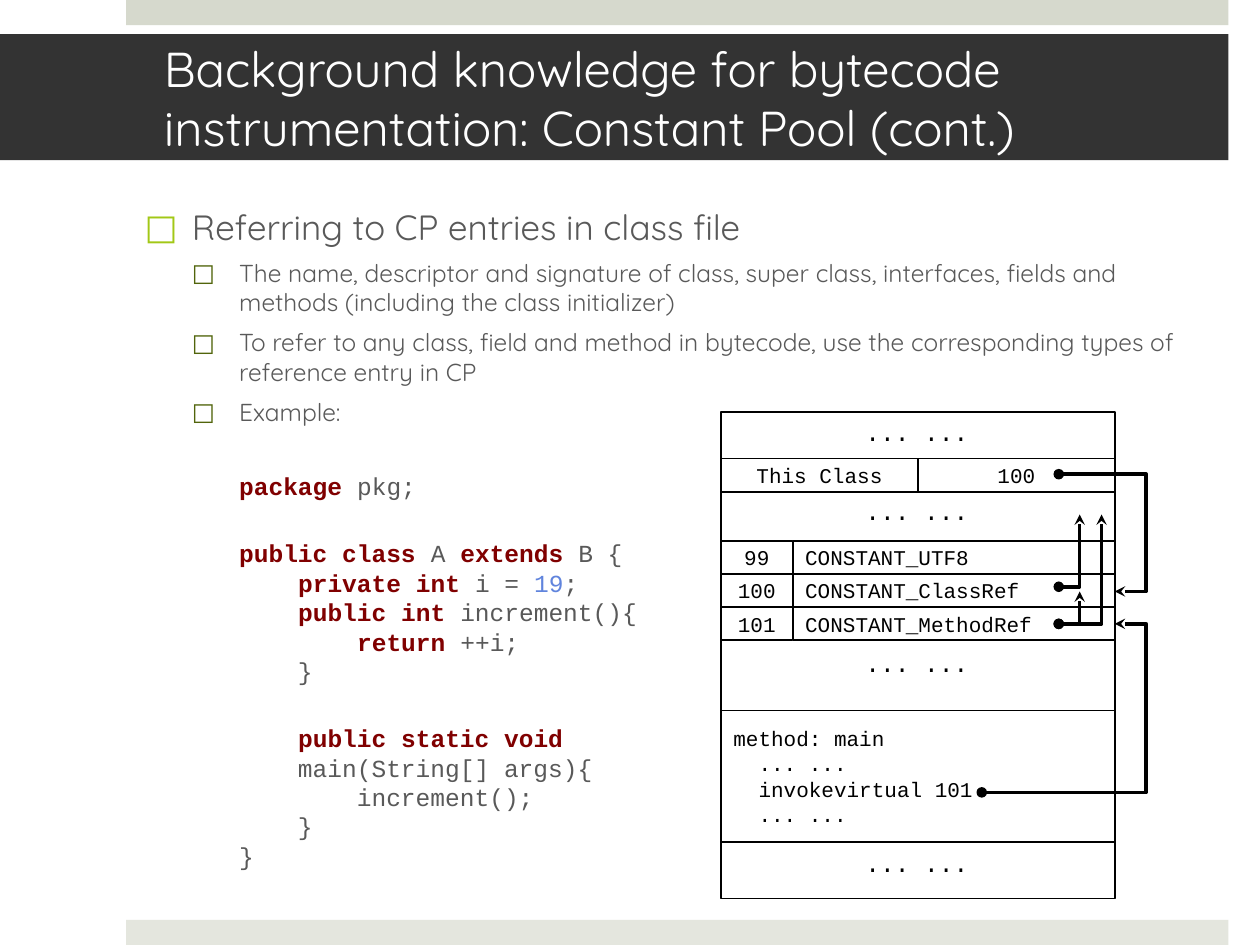
from pptx import Presentation
from pptx.dml.color import RGBColor
from pptx.enum import shapes, text
from pptx.oxml.ns import qn
from pptx.util import Pt
from lxml import etree

WHITE = RGBColor(255, 255, 255)
BLACK = RGBColor(0, 0, 0)
DARK = RGBColor(0x33, 0x33, 0x33)
GRAY = RGBColor(0x59, 0x59, 0x59)
SAGE = RGBColor(0xD6, 0xD9, 0xCD)
PALE = RGBColor(0xE4, 0xE6, 0xDE)
MAROON = RGBColor(0x80, 0, 0)
BLUE = RGBColor(0x60, 0x84, 0xDD)
LIME = RGBColor(0xA2, 0xC8, 0x16)
OLIVE = RGBColor(0x51, 0x64, 0x0B)
SANS, MONO = "Quicksand", "Courier New"
LEFT, CENTER = text.PP_ALIGN.LEFT, text.PP_ALIGN.CENTER

TITLE = "Background knowledge for bytecode instrumentation: Constant Pool (cont.)"
BANDS = [(72, 0, 630, 14.4, SAGE), (72, 525.6, 630, 14.4, PALE)]
BULLETS = [
    (0, "Referring to CP entries in class file"),
    (1, "The name, descriptor and signature of class, super class, interfaces, "
        "fields and methods (including the class initializer)"),
    (1, "To refer to any class, field and method in bytecode, use the "
        "corresponding types of reference entry in CP"),
    (1, "Example:"),
]
LEVELS = [dict(size=20, before=20, margin=27, bullet=LIME),
          dict(size=14, before=6, margin=54, bullet=OLIVE)]
CODE = [
    ("package ", MAROON), ("pkg;\n\n", GRAY),
    ("public class", MAROON), (" A ", GRAY), ("extends ", MAROON), ("B {\n    ", GRAY),
    ("private int", MAROON), (" i = ", GRAY), ("19", BLUE), (";\n    ", GRAY),
    ("public int", MAROON), (" increment(){\n        ", GRAY),
    ("return ", MAROON), ("++i;\n    }\n\n    ", GRAY),
    ("public static void \n", MAROON),
    ("    main(String[] args){\n        increment();\n    }\n}", GRAY),
]
ENTRIES = [("99", "CONSTANT_UTF8"), ("100", "CONSTANT_ClassRef"),
           ("101", "CONSTANT_MethodRef")]
METHOD = "method: main\n  ... ...\n  invokevirtual 101\n  ... ..."
POOL_X, POOL_Y, POOL_W, POOL_H = 412, 235.4, 225, 278
INDEX_W, ROW_H, CLASS_Y, ENTRY_Y = 41, 19, 262, 309
GAP_TOPS = [234.8, 280, 366.5, 481]
OUTSIDE = 655
LINKS = [
    (561, 452.8, 637, 356.5, OUTSIDE),
    (605, 271, 637, 338, OUTSIDE),
    (605, 356.5, 617, 338, None),
    (605, 356.5, 629.5, 294, None),
    (605, 335.3, 617, 294, None),
]

prs = Presentation()
prs.slide_width, prs.slide_height = Pt(720), Pt(540)
s = prs.slides.add_slide(prs.slide_layouts[6])


def add_rect(x, y, w, h, fill=WHITE, line=None):
    sp = s.shapes.add_shape(shapes.MSO_SHAPE.RECTANGLE, Pt(x), Pt(y), Pt(w), Pt(h))
    sp.shadow.inherit = False
    sp.fill.solid()
    sp.fill.fore_color.rgb = fill
    if line is None:
        sp.line.fill.background()
    else:
        sp.line.color.rgb = line
        sp.line.width = Pt(1)
    return sp


def add_box(x, y, w, h):
    return s.shapes.add_textbox(Pt(x), Pt(y), Pt(w), Pt(h))


def write(p, content, size=12, font=MONO, color=BLACK, bold=False, align=LEFT, before=0):
    p.alignment = align
    p.space_before = Pt(before)
    for i, part in enumerate(content.split("\n")):
        if i:
            p.add_line_break()
        if part:
            r = p.add_run()
            r.text = part
            r.font.size, r.font.name, r.font.bold = Pt(size), font, bold
            r.font.color.rgb = color


def fill_text(sp, content, anchor=text.MSO_ANCHOR.MIDDLE, **fmt):
    tf = sp.text_frame
    tf.word_wrap = True
    tf.vertical_anchor = anchor
    write(tf.paragraphs[0], content, **fmt)
    return tf


def add_bullet(p, color, margin):
    pPr = p._p.get_or_add_pPr()
    pPr.set("marL", str(Pt(margin)))
    pPr.set("indent", str(-Pt(27)))
    clr = etree.SubElement(pPr, qn("a:buClr"))
    etree.SubElement(clr, qn("a:srgbClr"), val=str(color))
    etree.SubElement(pPr, qn("a:buFont"), typeface=SANS)
    etree.SubElement(pPr, qn("a:buChar"), char="□")


def add_link(x1, y1, x2, y2, bend):
    c = s.shapes.add_connector(shapes.MSO_CONNECTOR.ELBOW, Pt(x1), Pt(y1), Pt(x2), Pt(y2))
    c.line.color.rgb = BLACK
    c.line.width = Pt(2)
    spPr = c._element.spPr
    geom = spPr.find(qn("a:prstGeom"))
    if bend is None:
        geom.set("prst", "bentConnector2")
    else:
        ratio = round((bend - x1) / (x2 - x1) * 100000)
        guides = geom.find(qn("a:avLst"))
        etree.SubElement(guides, qn("a:gd"), name="adj1", fmla=f"val {ratio}")
    ln = spPr.find(qn("a:ln"))
    etree.SubElement(ln, qn("a:headEnd"), type="oval")
    etree.SubElement(ln, qn("a:tailEnd"), type="stealth")
    etree.SubElement(spPr, qn("a:effectLst"))


def add_cell(x, y, w, h, content, align=LEFT):
    fill_text(add_rect(x, y, w, h, line=BLACK), content, align=align)


for band in BANDS:
    add_rect(*band)
tf = fill_text(add_rect(0, 19.5, 702, 72, DARK), TITLE, size=28, font=SANS, color=WHITE)
tf.margin_left, tf.margin_right = Pt(93.6), Pt(21.6)

tf = add_box(75.6, 113.8, 626.4, 379.4).text_frame
tf.word_wrap = True
for i, (level, content) in enumerate(BULLETS):
    p = tf.add_paragraph() if i else tf.paragraphs[0]
    p.level = level
    style = LEVELS[level]
    write(p, content, size=style["size"], font=SANS, color=GRAY, before=style["before"])
    add_bullet(p, style["bullet"], style["margin"])

add_rect(POOL_X, POOL_Y, POOL_W, POOL_H, line=BLACK)
for i, content in enumerate(["This Class", "100"]):
    add_cell(POOL_X + i * POOL_W / 2, CLASS_Y, POOL_W / 2, ROW_H, content, CENTER)
for i, (index, entry) in enumerate(ENTRIES):
    y = ENTRY_Y + i * ROW_H
    add_cell(POOL_X, y, INDEX_W, ROW_H, index, CENTER)
    add_cell(POOL_X + INDEX_W, y, POOL_W - INDEX_W, ROW_H, entry)
add_cell(POOL_X, 406, POOL_W, 75, METHOD)
for link in LINKS:
    add_link(*link)
for y in GAP_TOPS:
    fill_text(add_box(453, y, 142, 24.2), "... ...", text.MSO_ANCHOR.TOP, size=14, align=CENTER)

tf = add_box(129.6, 265.7, 256.3, 247.7).text_frame
tf.word_wrap = True
for content, color in CODE:
    write(tf.paragraphs[0], content, size=14, color=color, bold=color == MAROON, before=20)

prs.save("out.pptx")
